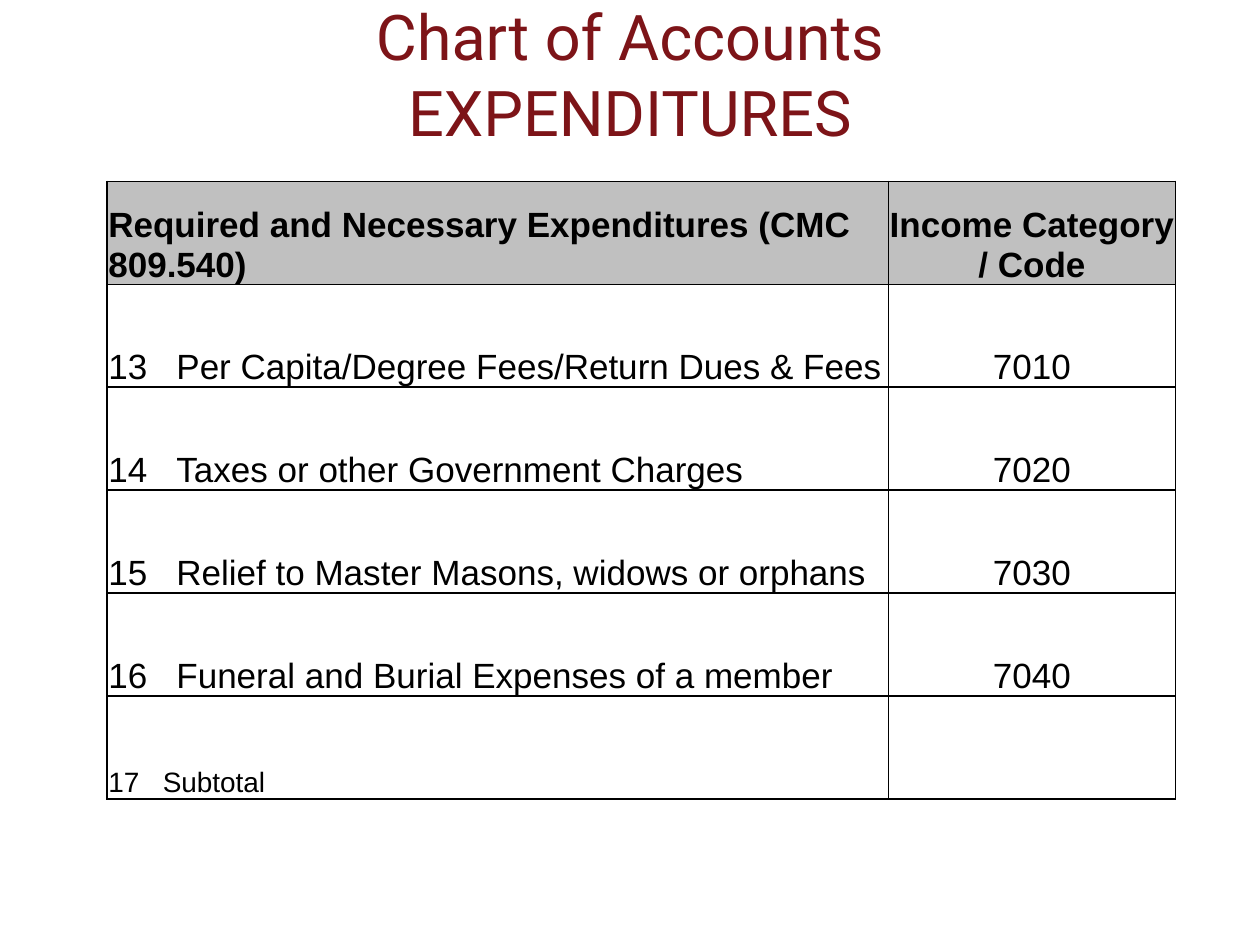
import pptx
import pptx.util
import pptx.dml.color
import pptx.enum.text
from lxml import etree

Inches, Pt = pptx.util.Inches, pptx.util.Pt
ALIGN = pptx.enum.text.PP_ALIGN
ANCHOR = pptx.enum.text.MSO_ANCHOR
NS = "http://schemas.openxmlformats.org/drawingml/2006/main"

COLORS = {"title": "7D1418", "text": "000000", "head": "C0C0C0", "line": "000000"}
TITLE = "Chart of Accounts\vEXPENDITURES"
ROWS = [
    ("Required and Necessary Expenditures (CMC 809.540)", "Income Category / Code"),
    ("13\tPer Capita/Degree Fees/Return Dues & Fees", "7010"),
    ("14\tTaxes or other Government Charges", "7020"),
    ("15\tRelief to Master Masons, widows or orphans", "7030"),
    ("16\tFuneral and Burial Expenses of a member", "7040"),
    ("17\tSubtotal", ""),
]
WIDTHS = (6.2, 2.28)
LEFT, TOP, HEIGHT = 0.85, 1.44, 4.9


def rgb(name):
    return pptx.dml.color.RGBColor.from_string(COLORS[name])


def add(node, tag, **attrs):
    return etree.SubElement(node, f"{{{NS}}}{tag}", attrs)


def style(para, name, size, color, bold=False):
    font = para.font
    font.name, font.size, font.bold = name, Pt(size), bold
    font.color.rgb = rgb(color)


def border(cell):
    props = cell._tc.get_or_add_tcPr()
    for i, side in enumerate(("lnL", "lnR", "lnT", "lnB")):
        line = add(props, side, w=str(Pt(1)))
        add(add(line, "solidFill"), "srgbClr", val=COLORS["line"])
        props.insert(i, line)


def fill_cell(cell, text, row, col):
    head, last = row == 0, row == len(ROWS) - 1
    size = 16 if last else 20
    cell.margin_left = cell.margin_right = cell.margin_top = Inches(0.01)
    cell.margin_bottom = 0
    cell.vertical_anchor = ANCHOR.BOTTOM
    if head:
        cell.fill.solid()
        cell.fill.fore_color.rgb = rgb("head")
    else:
        cell.fill.background()
    border(cell)
    cell.text = text
    para = cell.text_frame.paragraphs[0]
    para.alignment = ALIGN.CENTER if col else ALIGN.LEFT
    if "\t" in text:
        tabs = add(para._p.get_or_add_pPr(), "tabLst")
        add(tabs, "tab", pos=str(Inches(0.027 * size)), algn="l")
    style(para, "Arial", size, "text", head)


def main():
    deck = pptx.Presentation()
    deck.slide_width, deck.slide_height = Inches(10), Inches(7.5)
    slide = deck.slides.add_slide(deck.slide_layouts[5])

    title = slide.shapes.title
    title.left, title.top = Inches(0.5), 0
    title.width, title.height = Inches(9), Inches(1.16)
    frame = title.text_frame
    frame.text = TITLE
    frame.vertical_anchor = ANCHOR.MIDDLE
    frame.auto_size = pptx.enum.text.MSO_AUTO_SIZE.NONE
    frame.paragraphs[0].alignment = ALIGN.CENTER
    style(frame.paragraphs[0], "Roboto", 36, "title")

    grid = slide.shapes.add_table(
        len(ROWS), len(WIDTHS), Inches(LEFT), Inches(TOP),
        Inches(sum(WIDTHS)), Inches(HEIGHT)).table
    grid.first_row = grid.horz_banding = False
    for col, width in enumerate(WIDTHS):
        grid.columns[col].width = Inches(width)
    for row, texts in enumerate(ROWS):
        for col, text in enumerate(texts):
            fill_cell(grid.cell(row, col), text, row, col)

    deck.save("out.pptx")


if __name__ == "__main__":
    main()
